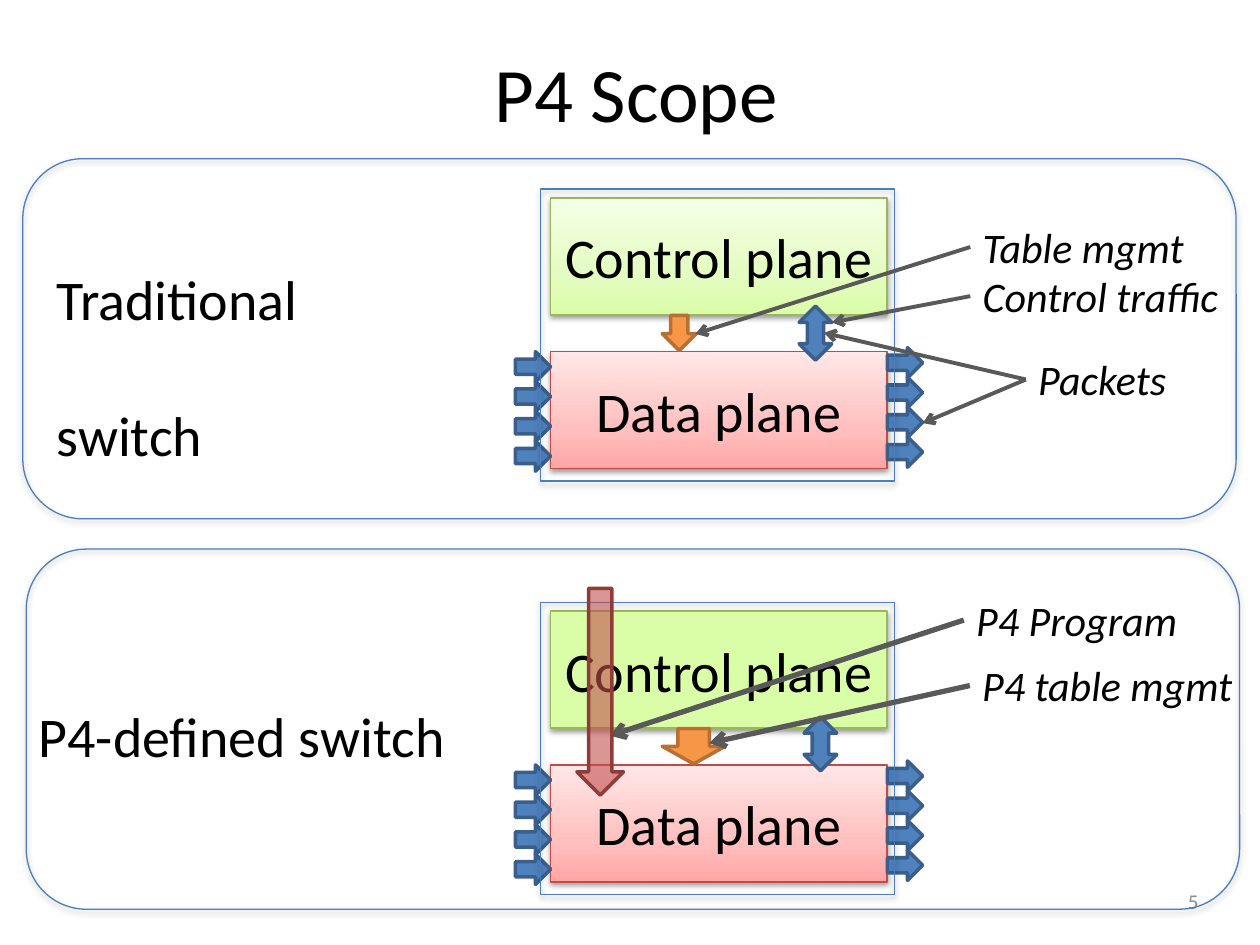
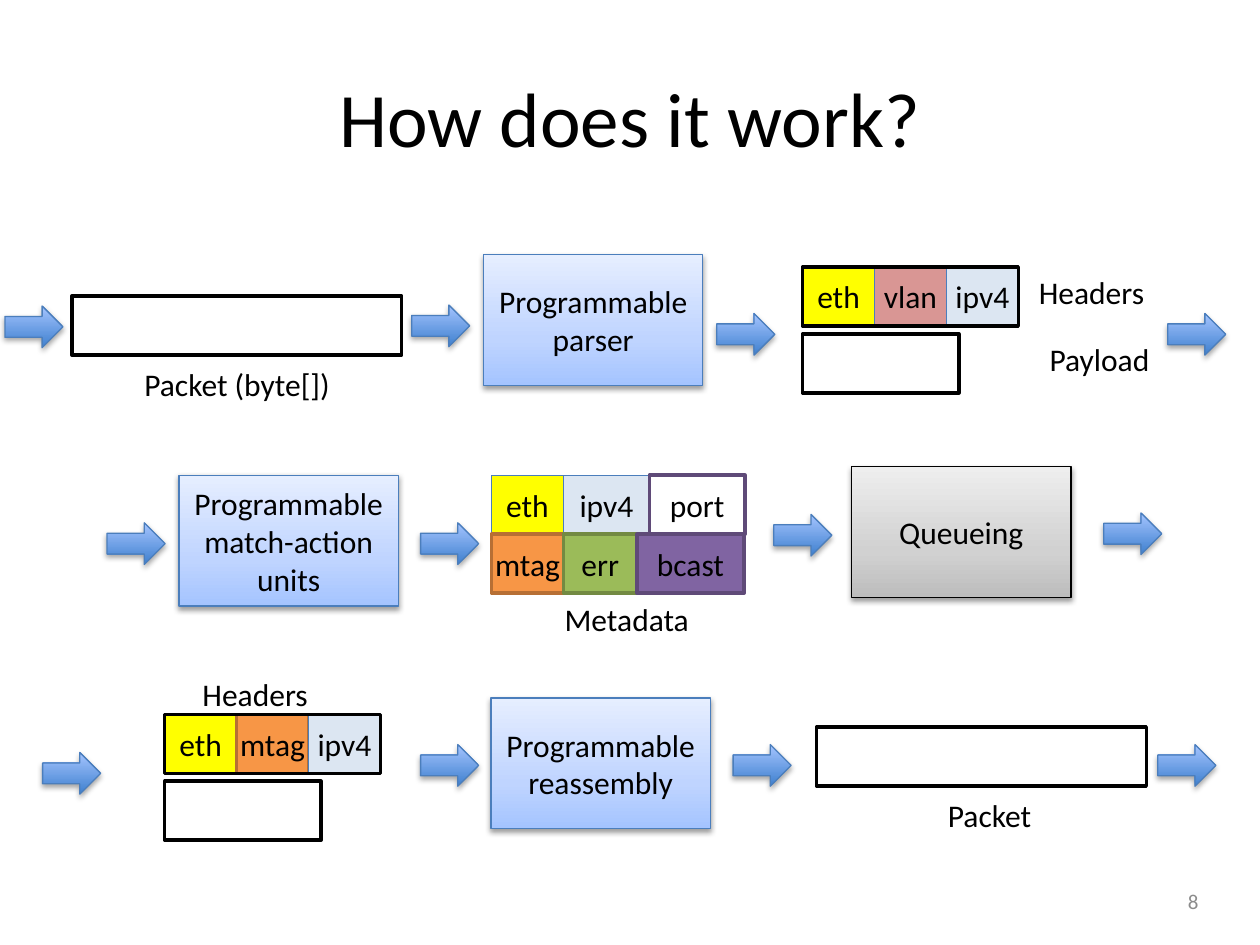
from lxml import etree
from pptx import Presentation
from pptx.dml.color import RGBColor
from pptx.enum.shapes import MSO_CONNECTOR, MSO_SHAPE
from pptx.enum.text import MSO_ANCHOR, MSO_AUTO_SIZE, PP_ALIGN
from pptx.oxml.ns import qn
from pptx.util import Cm, Pt

RECT = MSO_SHAPE.RECTANGLE
ROUNDED = MSO_SHAPE.ROUNDED_RECTANGLE
RIGHT = MSO_SHAPE.RIGHT_ARROW
DOWN = MSO_SHAPE.DOWN_ARROW
UP_DOWN = MSO_SHAPE.UP_DOWN_ARROW
STRAIGHT = MSO_CONNECTOR.STRAIGHT
TOP, MIDDLE = MSO_ANCHOR.TOP, MSO_ANCHOR.MIDDLE
GROW, FIXED = MSO_AUTO_SIZE.SHAPE_TO_FIT_TEXT, MSO_AUTO_SIZE.NONE
LEFT_ALIGN, CENTER, RIGHT_ALIGN = PP_ALIGN.LEFT, PP_ALIGN.CENTER, PP_ALIGN.RIGHT

FONT = "Calibri"
BLACK, WHITE, GREY, CALLOUT = "000000", "FFFFFF", "8C8C8C", "595959"
BLUE, BLUE_EDGE, THIN_BLUE = "4F81BD", "3A5F8C", "4B7EBC"
ORANGE, ORANGE_EDGE = "F79646", "B76F34"
GREEN_EDGE, RED_EDGE, PURPLE_EDGE = "98B955", "BF4C48", "5F4A78"
GREEN = ["DAFDA7", "E4FCC2", "F5FFE7"]
RED = ["FFA6A5", "FFC0BF", "FFE7E7"]
PALE_BLUE = ["A4C4FF", "BFD4FF", "E6EEFF"]
SILVER = ["BDBDBD", "D1D1D1", "EEEEEE"]
FLOW_BLUE = ["3F80CE", "A4C4FF"]
STOPS = {2: (0, 100), 3: (0, 35, 100)}

PLANE = (6.78, 2.36)
STAGE = (4.42, 2.64)
FLOW_ARROW = (1.17, 0.84)
CELL_WIDTH, CELL_HEIGHT = 1.45, 1.19
CELLS = {
    "eth": ("FFFF00", THIN_BLUE, 0.75),
    "vlan": ("D99694", THIN_BLUE, 0.75),
    "ipv4": ("DCE6F2", THIN_BLUE, 0.75),
    "port": (None, PURPLE_EDGE, 2),
    "mtag": (ORANGE, ORANGE_EDGE, 2),
    "err": ("9BBB59", "738A42", 2),
    "bcast": ("8064A2", PURPLE_EDGE, 2),
}


def color(value):
    """Turn a hex string into a colour."""
    return RGBColor.from_string(value)


def within(box, left, top, width, height):
    """Return a box placed relative to the corner of another."""
    return box[0] + left, box[1] + top, width, height


def write(shape, text, size=18, align=CENTER, anchor=MIDDLE, ink=BLACK,
          italic=False, wrap=True, resize=FIXED, gap=0):
    """Fill a shape with formatted text, one paragraph per line."""
    frame = shape.text_frame
    frame.word_wrap = wrap
    frame.auto_size = resize
    frame.vertical_anchor = anchor
    for index, line in enumerate(text.split("\n")):
        para = frame.add_paragraph() if index else frame.paragraphs[0]
        para.alignment = align
        para.space_before = Pt(gap if index else 0)
        span = para.add_run()
        span.text = line
        span.font.name = FONT
        span.font.size = Pt(size)
        span.font.italic = italic
        span.font.color.rgb = color(ink)


def add_text(page, box, text, **style):
    """Add a text box."""
    write(page.shapes.add_textbox(*map(Cm, box)), text, **style)


def add_label(page, box, text, **style):
    """Add a text box that does not wrap and grows with its text."""
    add_text(page, box, text, anchor=TOP, wrap=False, resize=GROW, **style)


def paint_gradient(shape, shades):
    """Fill a shape from bottom to top with the given shades."""
    shape.fill.gradient()
    shape.fill.gradient_angle = 90
    stops = shape._element.spPr.find(qn("a:gradFill")).find(qn("a:gsLst"))
    for stop in list(stops):
        stops.remove(stop)
    for position, shade in zip(STOPS[len(shades)], shades):
        stop = etree.SubElement(stops, qn("a:gs"), pos=str(position * 1000))
        etree.SubElement(stop, qn("a:srgbClr"), val=shade)


def cast_shadow(shape, opacity):
    """Give a shape a soft shadow below it."""
    effects = shape._element.spPr.find(qn("a:effectLst"))
    shadow = etree.SubElement(effects, qn("a:outerShdw"), blurRad="40000",
                              dist="21500", dir="5400000", rotWithShape="0")
    shade = etree.SubElement(shadow, qn("a:srgbClr"), val=BLACK)
    etree.SubElement(shade, qn("a:alpha"), val=str(opacity * 1000))


def add_shape(page, kind, box, fill=None, edge=BLACK, weight=0.75, shadow=0,
              opacity=100):
    """Add a preset shape with a plain, graded or empty fill."""
    shape = page.shapes.add_shape(kind, *map(Cm, box))
    shape.shadow.inherit = False
    if isinstance(fill, list):
        paint_gradient(shape, fill)
    elif fill:
        shape.fill.solid()
        shape.fill.fore_color.rgb = color(fill)
    else:
        shape.fill.background()
    if opacity < 100:
        shade = shape._element.spPr.find(qn("a:solidFill"))[0]
        etree.SubElement(shade, qn("a:alpha"), val=str(opacity * 1000))
    shape.line.color.rgb = color(edge)
    shape.line.width = Pt(weight)
    if shadow:
        cast_shadow(shape, shadow)
    return shape


def add_pointer(page, start, end, weight):
    """Add a line with an open arrowhead at its end."""
    pointer = page.shapes.add_connector(STRAIGHT, *map(Cm, start + end))
    pointer.line.color.rgb = color(CALLOUT)
    pointer.line.width = Pt(weight)
    properties = pointer._element.spPr
    etree.SubElement(properties.find(qn("a:ln")), qn("a:tailEnd"), type="arrow")
    etree.SubElement(properties, qn("a:effectLst"))


def add_furniture(page, title_box, title, number):
    """Add the title and the page number."""
    add_text(page, title_box, title, size=44)
    add_text(page, (21.77, 17.65, 2.64, 1.02), number, size=12,
             align=RIGHT_ALIGN, ink=GREY)


def add_callout(page, panel, left, top, width, text, tips, weight):
    """Add an italic remark with pointers from its left edge."""
    box = within(panel, left, top, width, 1.27)
    for tip in tips:
        end = panel[0] + tip[0], panel[1] + tip[1]
        add_pointer(page, (box[0], box[1] + 0.64), end, weight)
    add_label(page, box, text, size=24, align=LEFT_ALIGN, italic=True)


def add_exchange(page, box, left, top):
    """Add the two-way arrow between the planes."""
    add_shape(page, UP_DOWN, within(box, left, top, 0.66, 1.09),
              BLUE, BLUE_EDGE, 2)


def add_switch(page, box, control_fill, table_arrow_width):
    """Draw a switch with its two planes and its ports."""
    planes = [("Control plane", 0.18, control_fill, GREEN_EDGE),
              ("Data plane", 3.28, RED, RED_EDGE)]
    for name, top, fill, edge in planes:
        plane = add_shape(page, RECT, within(box, 0.2, top, *PLANE),
                          fill, edge, shadow=38)
        write(plane, name, size=32)
    for left, top in ((-0.51, 3.28), (6.99, 3.2)):
        for port in range(4):
            add_shape(page, RIGHT, within(box, left, top + port * 0.6, 0.71, 0.61),
                      BLUE, BLUE_EDGE, 2)
    add_shape(page, DOWN, within(box, 2.45, 2.55, table_arrow_width, 0.71),
              ORANGE, ORANGE_EDGE, 2)
    add_shape(page, RECT, box, edge=THIN_BLUE, shadow=35)


def add_traditional_panel(page, panel):
    """Draw the panel of the traditional switch."""
    add_shape(page, ROUNDED, panel, edge=THIN_BLUE, shadow=35)
    add_label(page, within(panel, 0.43, 2.01, 5.51, 3), "Traditional\nswitch",
              size=32, align=LEFT_ALIGN, gap=39)
    switch = within(panel, 10.44, 0.61, 7.14, 5.89)
    add_switch(page, switch, GREEN, 0.69)
    add_exchange(page, switch, 5.21, 2.36)
    callouts = [(19.1, 1.14, 4.9, "Table mgmt", [(13.56, 3.53)]),
                (19.1, 2.13, 5.51, "Control traffic", [(16.31, 3.3)]),
                (20.22, 3.81, 3.38, "Packets", [(18.14, 5.33), (16.15, 3.51)])]
    for callout in callouts:
        add_callout(page, panel, *callout, weight=2.25)


def add_p4_panel(page, panel):
    """Draw the panel of the P4-defined switch."""
    add_shape(page, ROUNDED, panel, edge=THIN_BLUE, shadow=35)
    add_label(page, within(panel, 0, 2.95, 8.81, 1.63), "P4-defined switch",
              size=32, align=LEFT_ALIGN)
    switch = within(panel, 10.37, 1.07, 7.14, 5.89)
    add_switch(page, switch, GREEN[0], 1.27)
    add_exchange(page, switch, 5.31, 2.31)
    add_callout(page, panel, 18.9, 0.79, 4.8, "P4 Program", [(11.76, 3.76)], 3)
    add_shape(page, DOWN, within(panel, 11.1, 0.79, 0.94, 4.17),
              "C0504D", "8E3B39", 2, opacity=60)
    add_callout(page, panel, 19.02, 2.11, 5.84, "P4 table mgmt",
                [(13.77, 3.91)], 3)


def add_flow(page, row, places):
    """Add the flow arrows of a row."""
    for left, top in places:
        add_shape(page, RIGHT, within(row, left, top, *FLOW_ARROW),
                  FLOW_BLUE, THIN_BLUE, shadow=35)


def add_stage(page, row, left, top, text, fill=PALE_BLUE, edge=THIN_BLUE):
    """Add one processing stage."""
    stage = add_shape(page, RECT, within(row, left, top, *STAGE),
                      fill, edge, shadow=38)
    write(stage, text)


def add_bar(page, row, left, top, width, fill=WHITE):
    """Add a black-edged bar of packet data."""
    add_shape(page, RECT, within(row, left, top, width, CELL_HEIGHT),
              fill, weight=2)


def add_caption(page, row, left, top, width, text):
    """Add a centred caption."""
    add_label(page, within(row, left, top, width, 1.02), text)


def add_cells(page, row, left, top, fields):
    """Add adjoining cells from pairs of name and width."""
    for name, width in fields:
        cell = add_shape(page, RECT, within(row, left, top, width, CELL_HEIGHT),
                         *CELLS[name])
        write(cell, name, wrap=False)
        left += width


def add_parsed_packet(page, row, left, top, names):
    """Add framed headers above their payload."""
    add_cells(page, row, left, top, [(name, CELL_WIDTH) for name in names])
    add_bar(page, row, left, top, CELL_WIDTH * len(names), fill=None)
    add_bar(page, row, left, top + 1.35, 3.15)


def add_parser_row(page, row):
    """Draw the steps from raw packet to headers."""
    add_flow(page, row, [(0, 1.04), (8.2, 1.02), (14.35, 1.19), (23.44, 1.19)])
    add_bar(page, row, 1.35, 0.84, 6.65)
    add_caption(page, row, 2.51, 2.11, 4.34, "Packet (byte[])")
    add_stage(page, row, 9.65, 0, "Programmable\nparser")
    add_parsed_packet(page, row, 16.08, 0.25, ["eth", "vlan", "ipv4"])
    add_caption(page, row, 20.57, 0.25, 2.67, "Headers")
    add_caption(page, row, 20.78, 1.6, 2.57, "Payload")


def add_match_row(page, row):
    """Draw the steps from matching to queueing."""
    add_flow(page, row, [(0, 1.14), (6.32, 1.14), (13.44, 0.97), (20.09, 0.94)])
    add_stage(page, row, 1.45, 0.18, "Programmable\nmatch-action\nunits")
    add_cells(page, row, 7.75, 0.18,
              [("eth", CELL_WIDTH), ("ipv4", 1.73), ("port", 1.93)])
    add_cells(page, row, 7.75, 0.18 + CELL_HEIGHT,
              [("mtag", CELL_WIDTH), ("err", 1.48), ("bcast", 2.16)])
    add_caption(page, row, 8.94, 2.57, 3.07, "Metadata")
    add_stage(page, row, 15.01, 0, "Queueing", SILVER, BLACK)


def add_reassembly_row(page, row):
    """Draw the steps from headers back to a packet."""
    add_flow(page, row, [(0, 1.68), (7.62, 1.52), (13.92, 1.52), (22.48, 1.52)])
    add_caption(page, row, 2.95, 0, 2.67, "Headers")
    add_parsed_packet(page, row, 2.46, 0.91, ["eth", "mtag", "ipv4"])
    add_stage(page, row, 9.04, 0.58, "Programmable\nreassembly")
    add_bar(page, row, 15.6, 1.17, 6.65)
    add_caption(page, row, 17.96, 2.44, 2.26, "Packet")


def main():
    """Build and save the deck."""
    deck = Presentation()
    deck.slide_width, deck.slide_height = Cm(25.4), Cm(19.05)
    blank = deck.slide_layouts[6]

    scope = deck.slides.add_slide(blank)
    add_furniture(scope, (1.4, 0.76, 22.86, 2.18), "P4 Scope", "5")
    add_traditional_panel(scope, (0.46, 3.2, 24.46, 7.26))
    add_p4_panel(scope, (0.53, 11.07, 24.46, 7.26))

    workings = deck.slides.add_slide(blank)
    add_furniture(workings, (1.27, 0.76, 22.86, 3.18), "How does it work?", "8")
    add_parser_row(workings, (0.1, 5.13, 24.61, 3.13))
    add_match_row(workings, (2.16, 9.4, 21.26, 3.59))
    add_reassembly_row(workings, (0.86, 13.49, 23.65, 3.46))

    deck.save("out.pptx")


if __name__ == "__main__":
    main()
